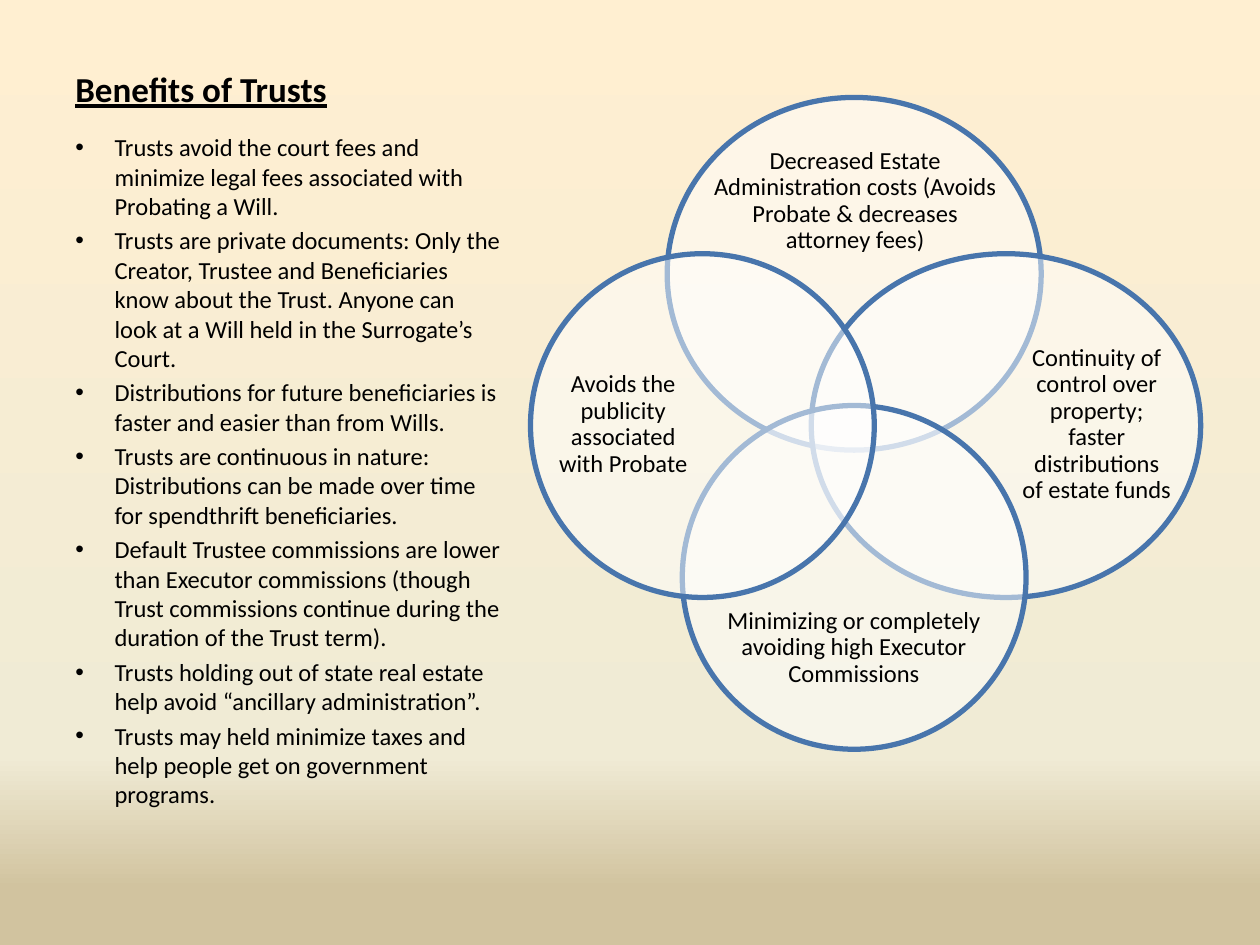
from pptx import Presentation
from pptx.dml.color import RGBColor
from pptx.enum.shapes import MSO_SHAPE as Shape
from pptx.enum.text import MSO_ANCHOR as Anchor, PP_ALIGN as Align
from pptx.oxml.ns import qn
from pptx.util import Cm, Pt
from lxml.etree import SubElement

CENTER_X, CENTER_Y, OFFSET = 17.22, 8.58, 3.06

BENEFITS = [
    "Trusts avoid the court fees and minimize legal fees associated with Probating a Will.",
    "Trusts are private documents: Only the Creator, Trustee and Beneficiaries know about the Trust. "
    "Anyone can look at a Will held in the Surrogate’s Court.",
    "Distributions for future beneficiaries is faster and easier than from Wills.",
    "Trusts are continuous in nature: Distributions can be made over time for spendthrift beneficiaries.",
    "Default Trustee commissions are lower than Executor commissions "
    "(though Trust commissions continue during the duration of the Trust term).",
    "Trusts holding out of state real estate help avoid “ancillary administration”.",
    "Trusts may held minimize taxes and help people get on government programs.",
]

VENN = [
    ((0, -1), (7.54, 7.11), (14.33, 2.92, 5.82, 2.26),
     "Decreased Estate Administration costs (Avoids Probate & decreases attorney fees)"),
    ((1, 0), (7.85, 6.93), (20.6, 5.89, 3.02, 5.33),
     "Continuity of control over property; faster distributions of estate funds"),
    ((0, 1), (6.93, 6.93), (14.55, 11.96, 5.33, 2.21),
     "Minimizing or completely avoiding high Executor Commissions"),
    ((-1, 0), (6.93, 6.93), (11.23, 5.89, 2.67, 5.33),
     "Avoids the publicity associated with Probate"),
]


def color(value):
    return RGBColor.from_string(value)


def apply(target, values):
    for name, value in values.items():
        setattr(target, name, value)


class TrustSlide:
    """Draws the elements of the trust slide in one shared style."""

    font = {"name": "Calibri", "size": Pt(14)}
    text_color, circle_fill, circle_line = "000000", "FFFFFF", "4875AC"

    def __init__(self, slide):
        self.slide = slide

    def background(self, stops):
        fill = self.slide.background.fill
        fill.gradient()
        fill.gradient_angle = 270
        stop_list = next(self.slide.element.iter(qn("a:gsLst")))
        for stop in list(stop_list):
            stop_list.remove(stop)
        for percent, value in stops:
            stop = SubElement(stop_list, qn("a:gs"), pos=str(percent * 1000))
            SubElement(stop, qn("a:srgbClr"), val=value)

    def text(self, box, texts, frame_format=None, paragraph_format=None, font_format=None):
        frame = self.slide.shapes.add_textbox(*map(Cm, box)).text_frame
        apply(frame, {"word_wrap": True, **(frame_format or {})})
        frame.text = "\n".join(texts)
        for paragraph in frame.paragraphs:
            apply(paragraph, paragraph_format or {})
            font = paragraph.runs[0].font
            apply(font, {**self.font, **(font_format or {})})
            font.color.rgb = color(self.text_color)
        return frame

    def bullets(self, box, texts):
        frame = self.text(box, texts, paragraph_format={"space_before": Pt(2.8)})
        for paragraph in frame.paragraphs:
            properties = paragraph._p.get_or_add_pPr()
            properties.set("marL", str(Cm(0.79)))
            properties.set("indent", str(Cm(-0.79)))
            SubElement(properties, qn("a:buFont"), typeface="Arial")
            SubElement(properties, qn("a:buChar"), char="•")

    def circle(self, direction, size):
        (across, down), (width, height) = direction, size
        left = CENTER_X + across * OFFSET - width / 2
        top = CENTER_Y + down * OFFSET - height / 2
        shape = self.slide.shapes.add_shape(Shape.OVAL, *map(Cm, (left, top, width, height)))
        shape.shadow.inherit = False
        shape.fill.solid()
        shape.fill.fore_color.rgb = color(self.circle_fill)
        fill_color = shape.element.spPr.find(qn("a:solidFill")).find(qn("a:srgbClr"))
        SubElement(fill_color, qn("a:alpha"), val="50000")
        shape.line.color.rgb = color(self.circle_line)
        shape.line.width = Pt(3)

    def label(self, box, text):
        margins = {f"margin_{side}": 0 for side in ("left", "top", "right", "bottom")}
        self.text(box, [text], {"vertical_anchor": Anchor.MIDDLE, **margins},
                  {"alignment": Align.CENTER, "line_spacing": 0.9})


def main():
    presentation = Presentation()
    apply(presentation, {"slide_width": Cm(25.4), "slide_height": Cm(19.05)})
    page = TrustSlide(presentation.slides.add_slide(presentation.slide_layouts[6]))
    page.background([(0, "FFEFD1"), (80, "F0EBD5"), (94, "D1C39F")])
    page.text((1.27, 0.76, 8.36, 1.57), ["Benefits of Trusts"], {"vertical_anchor": Anchor.BOTTOM},
              font_format={"size": Pt(20), "bold": True, "underline": True})
    page.bullets((1.27, 2.54, 9.09, 14.81), BENEFITS)
    for direction, size, label_box, text in VENN:
        page.circle(direction, size)
        page.label(label_box, text)
    presentation.save("out.pptx")


if __name__ == "__main__":
    main()
